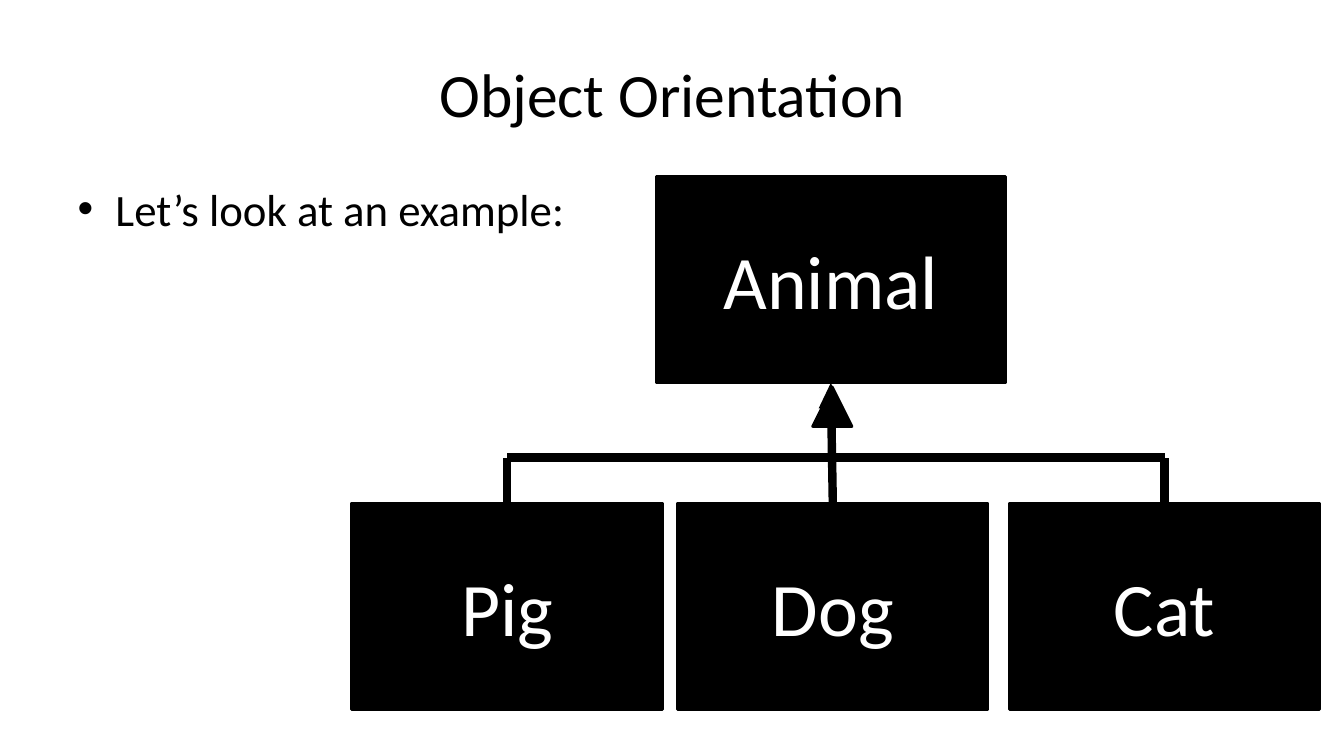
"""Build the Object Orientation slide with its animal class hierarchy."""
from lxml import etree
from pptx import Presentation
from pptx import util as u
from pptx.dml.color import RGBColor
from pptx.enum import shapes, text
from pptx.oxml.ns import qn

COLOURS = {"ink": "000000", "label": "FFFFFF"}
FONT = "Calibri"
TOP, BOTTOM = 0, 2
BOX_HEIGHT = 2.05
CHILD_WIDTH = 3.08
CHILD_TOP = 4.99
CROSSBAR_TOP = 4.54
CHILD_LEFTS = {"Dog": 6.72, "Pig": 3.49, "Cat": 10.01}


def colour(name):
    return RGBColor.from_string(COLOURS[name])


def set_values(target, values):
    for name, value in values.items():
        setattr(target, name, value)


def write_text(shape, wording, size, ink, alignment, anchor):
    frame = shape.text_frame
    set_values(frame, {"text": wording, "word_wrap": True, "vertical_anchor": anchor})
    paragraph = frame.paragraphs[0]
    paragraph.alignment = alignment
    font = paragraph.runs[0].font
    set_values(font, {"name": FONT, "size": u.Pt(size)})
    font.color.rgb = colour(ink)


def fill_placeholder(shape, box, wording, size, alignment, anchor):
    lengths = [u.Inches(length) for length in box]
    set_values(shape, dict(zip(("left", "top", "width", "height"), lengths)))
    write_text(shape, wording, size, "ink", alignment, anchor)


def add_solid(slide, kind, left, top, width, height):
    shape = slide.shapes.add_shape(kind, *map(u.Inches, (left, top, width, height)))
    shape.shadow.inherit = False
    shape.fill.solid()
    shape.fill.fore_color.rgb = colour("ink")
    shape.line.color.rgb = colour("ink")
    shape.line.width = u.Pt(2)
    return shape


def add_class_box(slide, name, left, top, width):
    shape = add_solid(slide, shapes.MSO_SHAPE.RECTANGLE, left, top, width, BOX_HEIGHT)
    write_text(shape, name, 54, "label", text.PP_ALIGN.CENTER, text.MSO_ANCHOR.MIDDLE)
    return shape


def add_line(slide, start, end):
    line = slide.shapes.add_connector(
        shapes.MSO_CONNECTOR.STRAIGHT, *map(u.Inches, (*start, *end)))
    line.line.color.rgb = colour("ink")
    line.line.width = u.Pt(6)
    etree.SubElement(line._element.spPr, qn("a:effectLst"))
    return line


def add_arrowhead(line):
    etree.SubElement(line.line._get_or_add_ln(), qn("a:tailEnd"), type="triangle")


def child_centre(name):
    return CHILD_LEFTS[name] + CHILD_WIDTH / 2


def add_hierarchy(slide):
    animal = add_class_box(slide, "Animal", 6.51, 1.75, 3.46)
    children = {}
    for name, left in CHILD_LEFTS.items():
        children[name] = add_class_box(slide, name, left, CHILD_TOP, CHILD_WIDTH)

    inheritance = add_line(slide, (child_centre("Dog"), CHILD_TOP), (8.24, 3.8))
    inheritance.begin_connect(children["Dog"], TOP)
    inheritance.end_connect(animal, BOTTOM)
    add_arrowhead(inheritance)
    add_solid(slide, shapes.MSO_SHAPE.ISOSCELES_TRIANGLE, 8.06, 3.84, 0.39, 0.39)

    add_line(slide, (child_centre("Cat"), CROSSBAR_TOP), (child_centre("Pig"), CROSSBAR_TOP))
    for name in ("Pig", "Cat"):
        centre = child_centre(name)
        riser = add_line(slide, (centre, CHILD_TOP), (centre, CROSSBAR_TOP))
        riser.begin_connect(children[name], TOP)


def main():
    presentation = Presentation()
    set_values(presentation, {"slide_width": u.Inches(13.33), "slide_height": u.Inches(7.5)})
    slide = presentation.slides.add_slide(presentation.slide_layouts[1])
    title, body = slide.placeholders
    fill_placeholder(title, (0.67, 0.3, 12, 1.25), "Object Orientation", 44,
                     text.PP_ALIGN.CENTER, text.MSO_ANCHOR.MIDDLE)
    fill_placeholder(body, (0.67, 1.75, 12, 4.95), "Let’s look at an example:", 32,
                     text.PP_ALIGN.LEFT, text.MSO_ANCHOR.TOP)
    add_hierarchy(slide)
    presentation.save("out.pptx")


if __name__ == "__main__":
    main()
